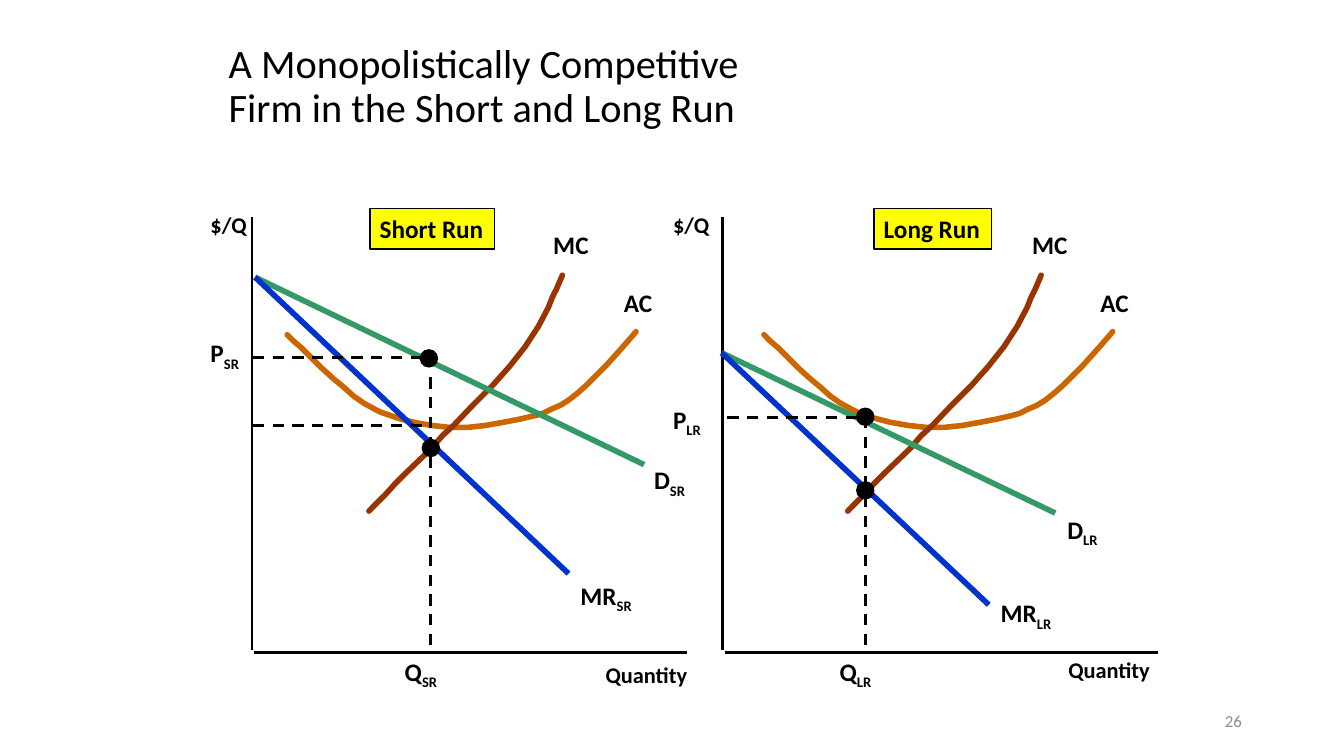
import pptx
import pptx.dml.color
import pptx.enum.dml
import pptx.enum.shapes
import pptx.enum.text
import pptx.oxml
import pptx.oxml.ns
import pptx.util

Pt = pptx.util.Pt
RGBColor = pptx.dml.color.RGBColor
SHAPE = pptx.enum.shapes.MSO_SHAPE
ANCHOR = pptx.enum.text.MSO_ANCHOR
ALIGN = pptx.enum.text.PP_ALIGN
DASH = pptx.enum.dml.MSO_LINE.DASH

BLACK = RGBColor(0x00, 0x00, 0x00)
GREY = RGBColor(0x8C, 0x8C, 0x8C)
YELLOW = RGBColor(0xFF, 0xFF, 0x00)
ORANGE = RGBColor(0xCC, 0x66, 0x00)
BROWN = RGBColor(0x99, 0x33, 0x00)
GREEN = RGBColor(0x33, 0x99, 0x66)
BLUE = RGBColor(0x00, 0x33, 0xCC)

TITLE_FONT = {"name": "Calibri", "size": Pt(28.8), "bold": False}
AXIS_FONT = {"name": "Calibri", "size": Pt(16), "bold": True}
LABEL_FONT = {"name": "Calibri", "size": Pt(18), "bold": True}
NUMBER_FONT = {"name": "Calibri", "size": Pt(12), "bold": False}

AVERAGE_COST = [
    (0, 2.2), (4.3, 6.5), (10.1, 11.5), (16.6, 18), (23.8, 25.2), (32.4, 33.1),
    (40.3, 39.6), (47.5, 46.1), (54.7, 51.1), (61.2, 54.7), (67, 57.6),
    (73.4, 59.8), (79.2, 61.9), (90.7, 64.8), (103, 67), (115.9, 68.4),
    (128.9, 68.4), (141.8, 67), (154.1, 64.8), (165.6, 62.6), (177.8, 59.8),
    (182.9, 58.3), (188.6, 55.4), (195.1, 52.6), (200.9, 49), (207.4, 43.9),
    (213.8, 38.2), (220.3, 31.7), (227.5, 24.5), (234, 17.3), (239.8, 10.8),
    (245.5, 4.3), (249.1, 0),
]
MARGINAL_COST = [
    (0, 168.5), (5, 163.4), (11.5, 157), (18.7, 149), (26.6, 141.1),
    (44.6, 123.8), (52.6, 114.5), (60.5, 107.3), (74.2, 92.9), (88.6, 78.5),
    (100.8, 64.8), (111.6, 51.1), (121, 36.7), (128.2, 23), (131, 15.8),
    (133.9, 10.1), (136.1, 5), (138.2, 0),
]

SHORT_RUN = {
    "name": "Short Run", "mark": "SR", "tag": (84.2, 89.3), "margin": -36.7,
    "quantity": (245.5, 313.9), "ac": (25.2, 82.1), "mc": (83.5, 41.8),
    "start": (2.2, 43.2), "demand": (280.1, 177.1), "revenue": (226.1, 254.9),
    "demand_label": (280.1, 173.5), "revenue_label": (227.5, 256.3),
    "output": 127.4, "drop_top": 112.3, "prices": [100.8, 149],
    "price_label": 82.8, "dots": [(126.4, 101.2), (127.8, 165.2)],
}
LONG_RUN = {
    "name": "Long Run", "mark": "LR", "tag": (108, 84.2), "margin": -42.5,
    "quantity": (239.8, 310.3), "ac": (29.5, 82.1), "mc": (89.3, 41.8),
    "start": (-0.7, 97.2), "demand": (237.6, 211.7), "revenue": (190.1, 277.2),
    "demand_label": (239.1, 208.8), "revenue_label": (191.5, 268.6),
    "output": 101.9, "drop_top": 141.8, "prices": [143.3],
    "price_label": 130.3, "dots": [(101.9, 142.9), (101.9, 195.5)],
}


def apply_format(target, values):
    for key, value in values.items():
        setattr(target, key, value)


def add_span(para, text, font, color=BLACK):
    span = para.add_run()
    span.text = text
    apply_format(span.font, font)
    span.font.color.rgb = color
    return span


def add_label(page, box, text, font=LABEL_FONT, mark=""):
    label = page.shapes.add_textbox(*map(Pt, box))
    label.text_frame.word_wrap = False
    para = label.text_frame.paragraphs[0]
    add_span(para, text, font)
    if mark:
        span = add_span(para, mark, font)
        span.font._element.set("baseline", "-25000")


def add_line(page, begin, end, color=BLACK, width=2, dash=None):
    line = page.shapes.add_connector(
        pptx.enum.shapes.MSO_CONNECTOR.STRAIGHT, *map(Pt, begin + end))
    line.line.color.rgb = color
    apply_format(line.line, {"width": Pt(width), "dash_style": dash})
    effects = pptx.oxml.ns.qn("a:effectLst")
    line._element.spPr.append(line._element.makeelement(effects, {}))


def add_curve(page, origin, points, color):
    places = [(Pt(origin[0] + x), Pt(origin[1] + y)) for x, y in points]
    builder = page.shapes.build_freeform(*places[0], scale=1.0)
    builder.add_line_segments(places[1:], close=False)
    curve = builder.convert_to_shape()
    curve.shadow.inherit = False
    curve.fill.background()
    curve.line.color.rgb = color
    curve.line.width = Pt(4)
    curve.line._get_or_add_ln().set("cap", "rnd")


def add_filled(page, preset, box, color):
    shape = page.shapes.add_shape(preset, *map(Pt, box))
    shape.shadow.inherit = False
    shape.fill.solid()
    shape.fill.fore_color.rgb = color
    shape.line.color.rgb = BLACK
    shape.line.width = Pt(1)
    return shape


def add_panel(page, box, run):
    left, top, width, height = box
    mark = run["mark"]

    def at(point):
        return left + point[0], top + point[1]

    def label(point, size, text, font=LABEL_FONT, mark=""):
        add_label(page, at(point) + size, text, font, mark)

    add_line(page, at((0, 0)), at((0, height - 1.4)))
    add_line(page, at((1.4, height)), at((width, height)))
    label(run["quantity"], (73.4, 26.6), "Quantity", AXIS_FONT)
    label((run["margin"], -7.2), (40.3, 26.6), "$/Q", AXIS_FONT)

    add_curve(page, at(run["ac"]), AVERAGE_COST, ORANGE)
    add_curve(page, at(run["mc"]), MARGINAL_COST, BROWN)
    label((run["mc"][0] + 124.6, run["mc"][1] - 36), (39.6, 28.8), "MC")
    label((run["ac"][0] + 233.3, run["ac"][1] - 35.3), (34.6, 28.8), "AC")

    add_line(page, at(run["start"]), at(run["demand"]), GREEN, 4)
    add_line(page, at(run["start"]), at(run["revenue"]), BLUE, 4)
    label(run["demand_label"], (38.2, 28.8), "D", mark=mark)
    label(run["revenue_label"], (52.6, 28.8), "MR", mark=mark)

    output = run["output"]
    add_line(page, at((output, 306)), at((output, run["drop_top"])), dash=DASH)
    for price in run["prices"]:
        add_line(page, at((output - 6, price)), at((-1, price)), dash=DASH)
    for x, y in run["dots"]:
        add_filled(page, SHAPE.OVAL, at((x - 6.1, y - 6.1)) + (12.2, 12.2), BLACK)
    label((output - 25.4, 310.3), (39.2, 28.8), "Q", mark=mark)
    label((run["margin"], run["price_label"]), (36.4, 28.8), "P", mark=mark)

    tag_left, tag_width = run["tag"]
    tag = add_filled(page, SHAPE.RECTANGLE, at((tag_left, -5.8)) + (tag_width, 28.8), YELLOW)
    tag.text_frame.word_wrap = False
    para = tag.text_frame.paragraphs[0]
    para.alignment = ALIGN.LEFT
    add_span(para, run["name"], LABEL_FONT)


def add_title(page, box, lines):
    title = page.shapes.title
    apply_format(title, dict(zip(("left", "top", "width", "height"), map(Pt, box))))
    apply_format(title.text_frame, {
        "vertical_anchor": ANCHOR.BOTTOM, "word_wrap": True,
        "auto_size": pptx.enum.text.MSO_AUTO_SIZE.NONE})
    para = title.text_frame.paragraphs[0]
    apply_format(para, {"alignment": ALIGN.LEFT, "line_spacing": 0.9})
    for index, line in enumerate(lines):
        if index:
            para.add_line_break()
        add_span(para, line, TITLE_FONT)


def add_page_number(page, box, number):
    frame = page.shapes.add_textbox(*map(Pt, box)).text_frame
    apply_format(frame, {"vertical_anchor": ANCHOR.MIDDLE, "word_wrap": True})
    para = frame.paragraphs[0]
    para.alignment = ALIGN.RIGHT
    add_span(para, number, NUMBER_FONT, GREY)


def main():
    deck = pptx.Presentation()
    apply_format(deck, {"slide_width": Pt(960), "slide_height": Pt(540)})
    page = deck.slides.add_slide(deck.slide_layouts[5])
    add_title(page, (156.2, 36, 628.6, 61.2),
              ["A Monopolistically Competitive", "Firm in the Short and Long Run"])
    for left, run in ((180, SHORT_RUN), (516.2, LONG_RUN)):
        add_panel(page, (left, 154.8, 311, 311), run)
    add_page_number(page, (678.2, 500.4, 216, 28.8), "26")
    deck.save("out.pptx")


if __name__ == "__main__":
    main()
